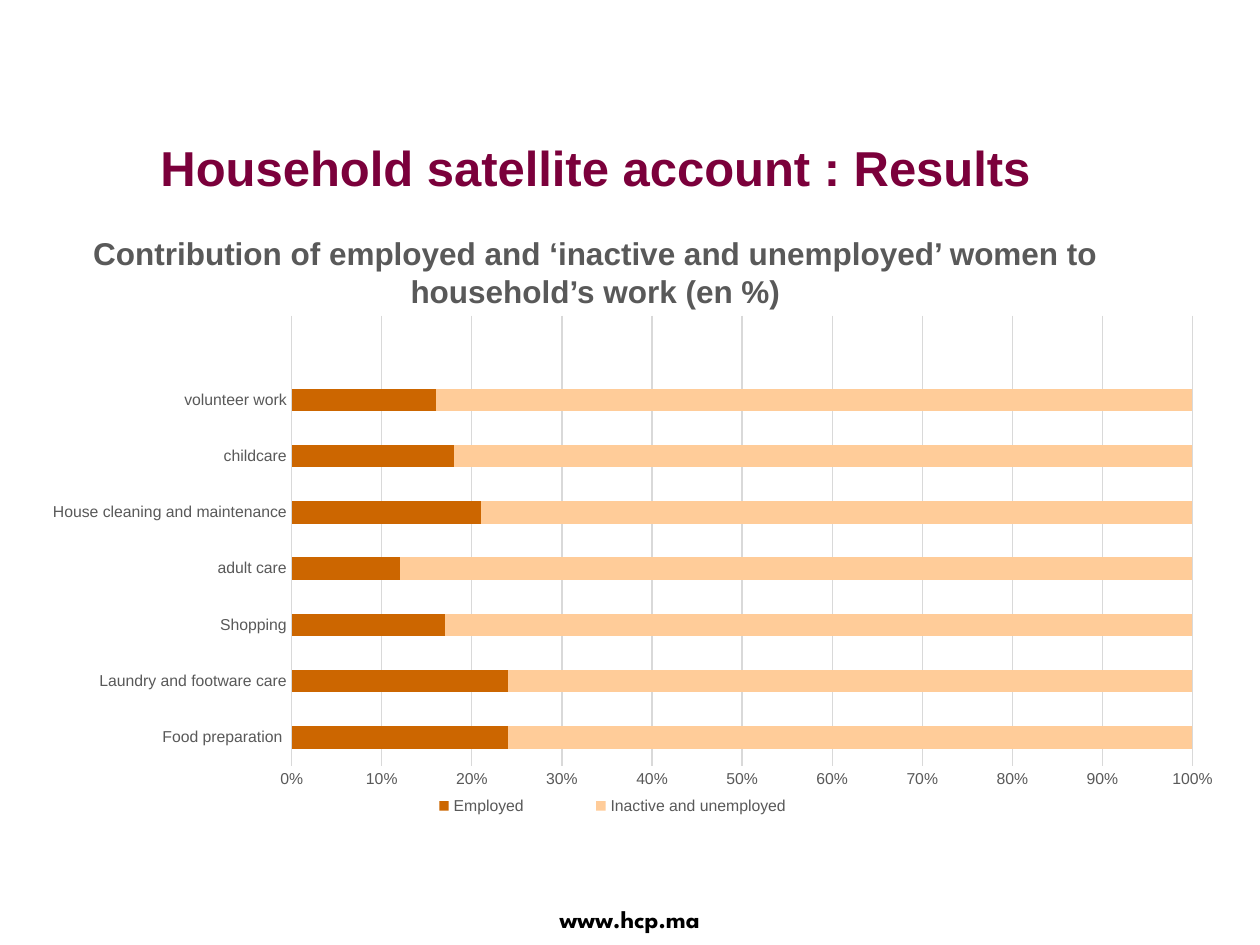
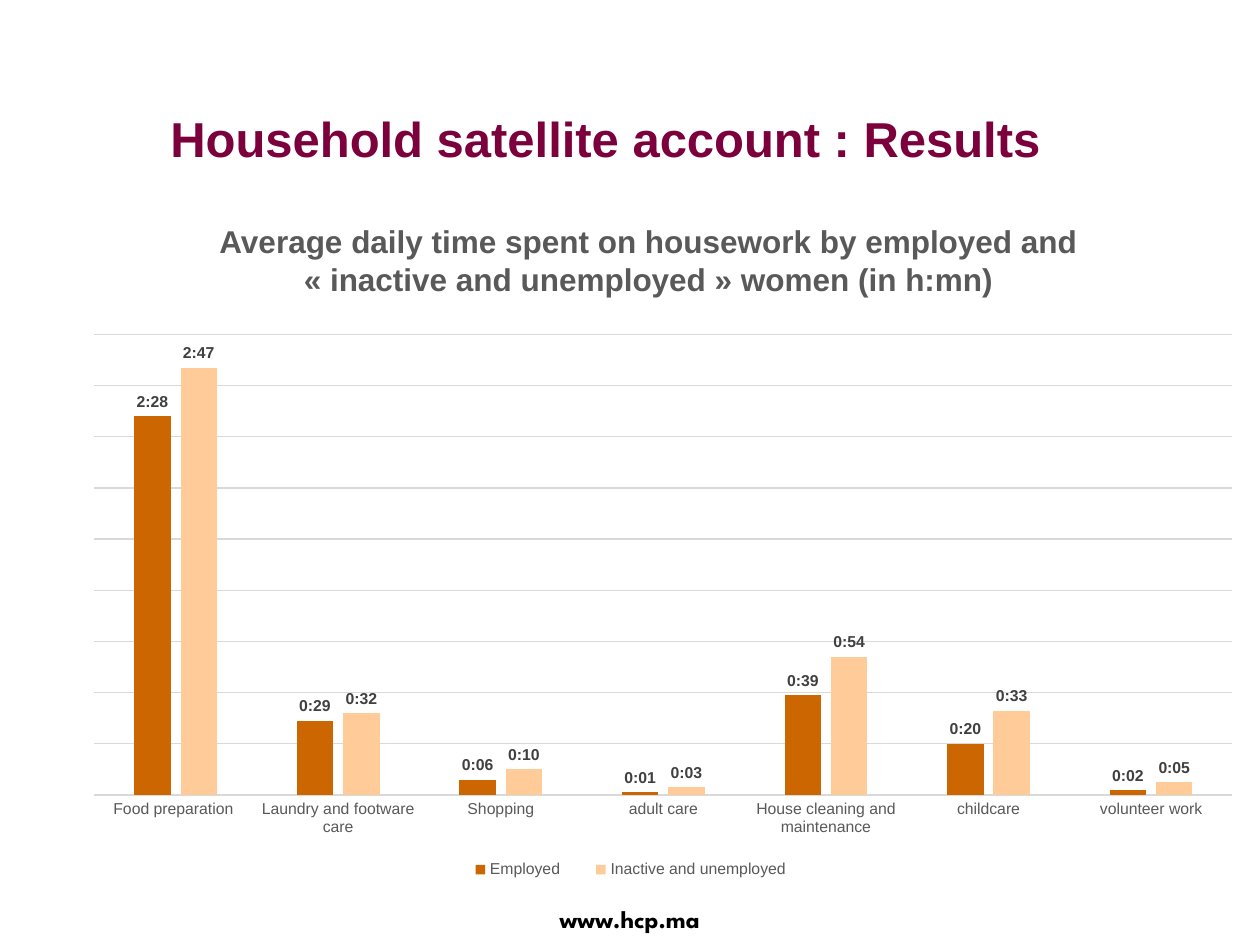
from dataclasses import dataclass

from lxml import etree
from pptx import Presentation
from pptx.chart.data import CategoryChartData
from pptx.dml.color import RGBColor
from pptx.enum.chart import XL_CHART_TYPE, XL_LABEL_POSITION, XL_LEGEND_POSITION, XL_TICK_MARK
from pptx.enum.text import MSO_ANCHOR, PP_ALIGN
from pptx.oxml.ns import qn
from pptx.util import Cm, Pt

STACKED = XL_CHART_TYPE.BAR_STACKED_100
CLUSTERED = XL_CHART_TYPE.COLUMN_CLUSTERED
OUTSIDE_END = XL_LABEL_POSITION.OUTSIDE_END
BOTTOM = XL_LEGEND_POSITION.BOTTOM
NO_TICK = XL_TICK_MARK.NONE
TOP, MIDDLE = MSO_ANCHOR.TOP, MSO_ANCHOR.MIDDLE
CENTER = PP_ALIGN.CENTER


@dataclass(frozen=True)
class Theme:
    font: str = "Arial"
    footer_font: str = "League Spartan"
    heading: str = "7B003B"
    body: str = "595959"
    value: str = "404040"
    grid: str = "D9D9D9"
    footer: str = "000000"
    bars: tuple = ("CC6600", "FFCC99")
    heading_size: int = 28
    subtitle_size: int = 18
    footer_size: int = 14
    chart_size: int = 9
    grid_width: float = 0.75


THEME = Theme()
HEADING = "Household satellite account : Results"
FOOTER = "www.hcp.ma"
FOOTER_BOX = (9.7, 18.1, 5.99, 0.84)
ACTIVITIES = [
    "Food preparation ", "Laundry and footware care", "Shopping", "adult care",
    "House cleaning and maintenance", "childcare", "volunteer work",
]
GROUPS = ["Employed ", "Inactive and unemployed"]

SLIDES = [
    {
        "heading_box": (0.6, 1.78, 22.81, 3.18),
        "subtitle": "Contribution of employed and ‘inactive and unemployed’ women to household’s work (en %)",
        "subtitle_box": (0.79, 4.17, 22.43, 2.64),
        "chart_box": (0.51, 6.35, 24.41, 10.31),
        "type": STACKED,
        "categories": ACTIVITIES + [""],
        "values": [
            (24, 24, 17, 12, 21, 18, 16, None),
            (76, 76, 83, 88, 79, 82, 84, None),
        ],
        "gap": 150,
        "overlap": 100,
        "plot": (0.22, 0, 0.744, 0.881),
        "legend": (0.29, 0.92, 0.39, 0.08),
    },
    {
        "heading_box": (0.8, 1.19, 22.81, 3.18),
        "subtitle": "Average daily time spent on housework by employed and « inactive and unemployed » women (in h:mn)",
        "subtitle_box": (4.06, 4.35, 18.03, 1.78),
        "chart_box": (0.51, 6.55, 24.41, 11.38),
        "type": CLUSTERED,
        "categories": ACTIVITIES,
        "values": [
            (148, 29, 6, 1, 39, 20, 2),
            (167, 32, 10, 3, 54, 33, 5),
        ],
        "gap": 219,
        "overlap": -27,
        "plot": (0.057, 0.017, 0.94, 0.816),
        "legend": (0.35, 0.93, 0.3, 0.07),
    },
]


def style_font(font, size, color, bold=False, name=THEME.font):
    font.name = name
    font.size = Pt(size)
    font.bold = bold
    font.color.rgb = RGBColor.from_string(color)


def style_line(line):
    line.color.rgb = RGBColor.from_string(THEME.grid)
    line.width = Pt(THEME.grid_width)


def add_text(slide, text, box, size, color, name=THEME.font, anchor=MIDDLE):
    tf = slide.shapes.add_textbox(*map(Cm, box)).text_frame
    tf.word_wrap = True
    tf.vertical_anchor = anchor
    tf.text = text
    p = tf.paragraphs[0]
    p.alignment = CENTER
    style_font(p.runs[0].font, size, color, True, name)


def set_layout(chart, tag, index, box, inner=False):
    parent = chart.element.find(".//" + qn(tag))
    for old in parent.findall(qn("c:layout")):
        parent.remove(old)
    layout = etree.Element(qn("c:layout"))
    manual = etree.SubElement(layout, qn("c:manualLayout"))
    settings = [("layoutTarget", "inner")] if inner else []
    settings += [("xMode", "edge"), ("yMode", "edge"), *zip("xywh", map(str, box))]
    for key, value in settings:
        etree.SubElement(manual, qn("c:" + key)).set("val", value)
    parent.insert(index, layout)


def label_times(series, minutes):
    labels = series.data_labels
    labels.show_value = True
    labels.number_format = "#,##0"
    labels.number_format_is_linked = False
    labels.position = OUTSIDE_END
    style_font(labels.font, THEME.chart_size, THEME.value, True)
    for i, total in enumerate(minutes):
        label = series.points[i].data_label
        tf = label.text_frame
        tf.text = f"{total // 60}:{total % 60:02}"
        style_font(tf.paragraphs[0].runs[0].font, THEME.chart_size, THEME.value, True)
        label.position = OUTSIDE_END


def add_results_chart(slide, content):
    data = CategoryChartData()
    data.categories = content["categories"]
    for group, values in zip(GROUPS, content["values"]):
        data.add_series(group, values)
    chart = slide.shapes.add_chart(content["type"], *map(Cm, content["chart_box"]), data).chart
    style_font(chart.font, THEME.chart_size, THEME.body)
    chart.has_title = False

    chart.has_legend = True
    chart.legend.position = BOTTOM
    chart.legend.include_in_layout = False
    style_font(chart.legend.font, THEME.chart_size, THEME.body)

    for axis in (chart.category_axis, chart.value_axis):
        axis.major_tick_mark = axis.minor_tick_mark = NO_TICK
        style_font(axis.tick_labels.font, THEME.chart_size, THEME.body)
    style_line(chart.category_axis.format.line)
    values_axis = chart.value_axis
    values_axis.has_major_gridlines = True
    style_line(values_axis.major_gridlines.format.line)
    values_axis.format.line.fill.background()

    plot = chart.plots[0]
    plot.vary_by_categories = False
    plot.gap_width = content["gap"]
    plot.overlap = content["overlap"]
    for series, color in zip(plot.series, THEME.bars):
        series.format.fill.solid()
        series.format.fill.fore_color.rgb = RGBColor.from_string(color)

    if content["type"] == STACKED:
        values_axis.tick_labels.number_format = "0%"
        values_axis.tick_labels.number_format_is_linked = False
    else:
        values_axis.visible = False
        values_axis.minimum_scale = 0
        values_axis.maximum_scale = 180
        values_axis.major_unit = 20
        for series, minutes in zip(plot.series, content["values"]):
            label_times(series, minutes)

    set_layout(chart, "c:plotArea", 0, content["plot"], inner=True)
    set_layout(chart, "c:legend", 1, content["legend"])


def main():
    prs = Presentation()
    prs.slide_width, prs.slide_height = Cm(25.4), Cm(19.05)
    for content in SLIDES:
        slide = prs.slides.add_slide(prs.slide_layouts[6])
        add_text(slide, FOOTER, FOOTER_BOX, THEME.footer_size, THEME.footer, THEME.footer_font, TOP)
        add_text(slide, content["subtitle"], content["subtitle_box"], THEME.subtitle_size, THEME.body)
        add_results_chart(slide, content)
        add_text(slide, HEADING, content["heading_box"], THEME.heading_size, THEME.heading)
    prs.save("out.pptx")


if __name__ == "__main__":
    main()
